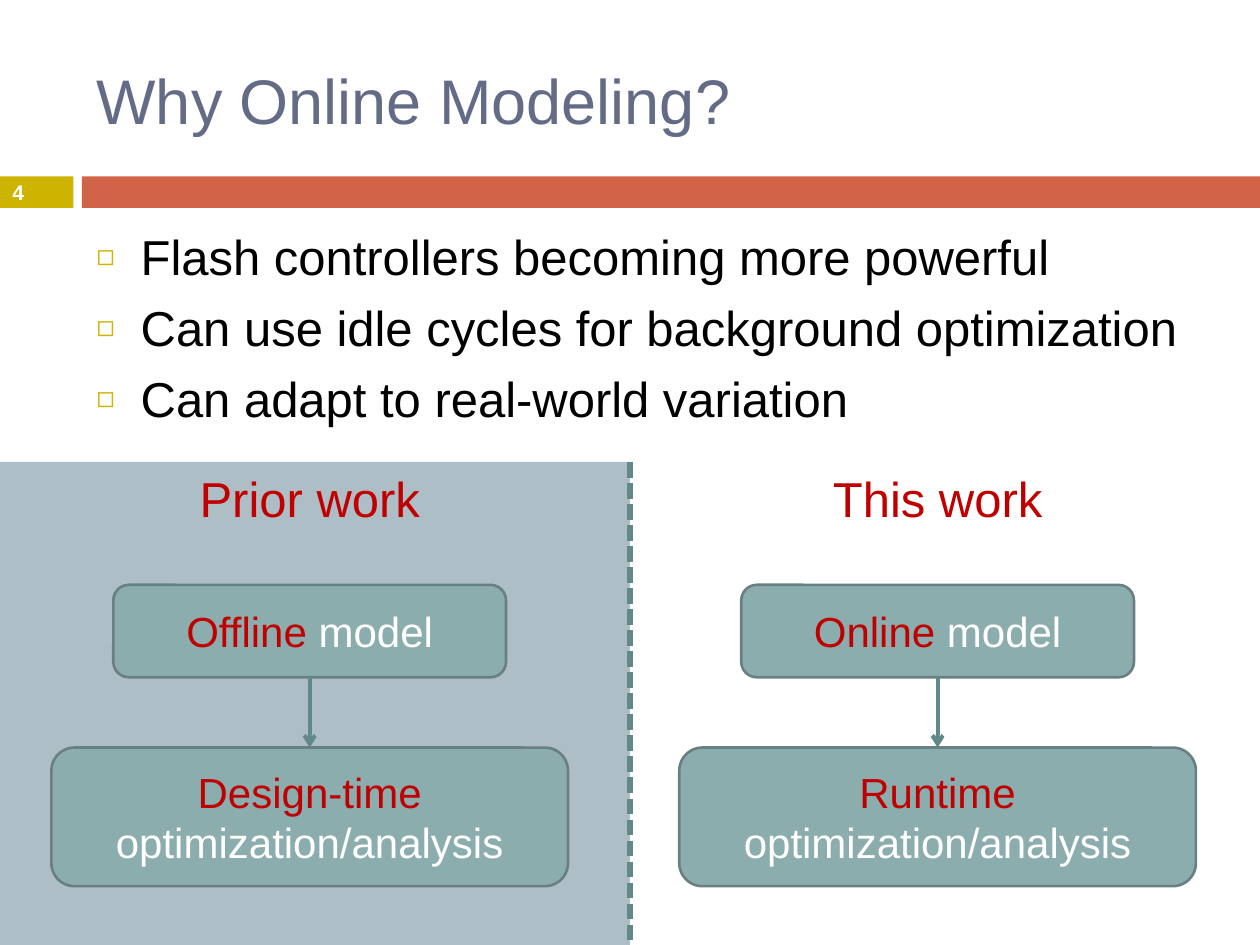
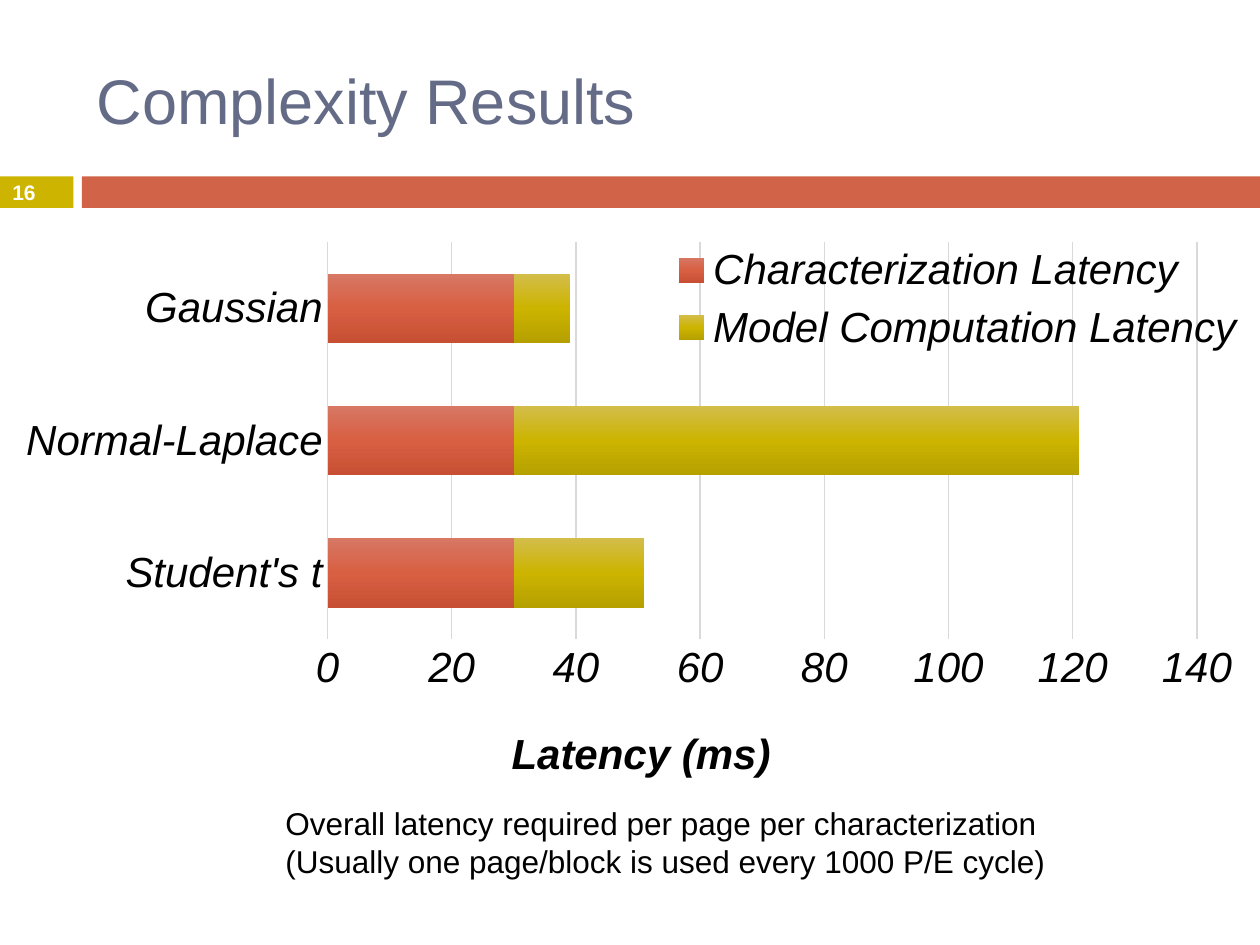
from lxml import etree
from pptx import Presentation
from pptx import util as u
from pptx.chart.data import CategoryChartData
from pptx.dml.color import RGBColor
from pptx.enum import chart as ch, dml, shapes, text
from pptx.oxml.ns import qn

# Shared look: lengths are cells of a grid with 120 columns and 90 rows
WIDTH, HEIGHT = u.Inches(10), u.Inches(7.5)
CELL = WIDTH / 120
FONT = "Arial"
GOLD, RUST, SLATE = "CCB400", "D16349", "646B86"
RED, WHITE, BLACK, GREY = "C00000", "FFFFFF", "000000", "D9D9D9"
PANEL, STEP_FILL, STEP_LINE, TEAL = "ADBEC6", "8CADAE", "688081", "61898A"

TITLE_BOX = (8, 3, 107, 13)
BODY_BOX = (8, 21, 107, 59)
BAND_TOP, BAND_HEIGHT = 16.8, 3


def rgb(hex_colour):
    return RGBColor.from_string(hex_colour)


def cells(*values):
    return [u.Emu(round(v * CELL)) for v in values]


def add_xml(parent, tag, **attributes):
    return etree.SubElement(parent, qn(tag), attributes)


def style(font, size, colour, bold=False, italic=False):
    font.name, font.size, font.color.rgb = FONT, u.Pt(size), rgb(colour)
    font.bold, font.italic = bold, italic


def place(placeholder, box):
    placeholder.left, placeholder.top, placeholder.width, placeholder.height = cells(*box)
    placeholder.text_frame.auto_size = text.MSO_AUTO_SIZE.NONE


def block(slide, box, fill, line=None, kind=shapes.MSO_SHAPE.RECTANGLE):
    part = slide.shapes.add_shape(kind, *cells(*box))
    part.shadow.inherit = False
    part.fill.solid()
    part.fill.fore_color.rgb = rgb(fill)
    if line:
        part.line.color.rgb = rgb(line)
        part.line.width = u.Pt(1.5)
    else:
        part.line.fill.background()
    return part


def label(slide, box, words, size, colour, align=text.PP_ALIGN.LEFT):
    caption = slide.shapes.add_textbox(*cells(*box))
    caption.text_frame.word_wrap = True
    paragraph = caption.text_frame.paragraphs[0]
    paragraph.text = words
    paragraph.alignment = align
    for run in paragraph.runs:
        style(run.font, size, colour)


def connector(slide, start, end, width):
    link = slide.shapes.add_connector(
        shapes.MSO_CONNECTOR.STRAIGHT, *cells(*start, *end))
    link.line.color.rgb = rgb(TEAL)
    link.line.width = u.Pt(width)
    add_xml(link._element.spPr, "a:effectLst")
    return link


def new_slide(deck, layout, heading, number):
    """Add a slide with the title, the two bands and the slide number."""
    slide = deck.slides.add_slide(deck.slide_layouts[layout])
    block(slide, (7.8, BAND_TOP, 112.2, BAND_HEIGHT), RUST)
    number_band = block(slide, (0, BAND_TOP, 7, BAND_HEIGHT), GOLD)
    number_band.text_frame.text = number
    number_band.text_frame.margin_top = number_band.text_frame.margin_bottom = 0
    style(number_band.text_frame.paragraphs[0].font, 12, WHITE, bold=True)

    title = slide.shapes.title
    place(title, TITLE_BOX)
    title.text_frame.text = heading
    title.text_frame.vertical_anchor = text.MSO_ANCHOR.MIDDLE
    paragraph = title.text_frame.paragraphs[0]
    paragraph.alignment = text.PP_ALIGN.LEFT
    style(paragraph.font, 36, SLATE)
    return slide


def bullet_list(body, points):
    place(body, BODY_BOX)
    body.text_frame.text = "\n".join(points)
    for i, paragraph in enumerate(body.text_frame.paragraphs):
        paragraph.space_before = u.Pt(7 if i else 0)
        properties = paragraph._p.get_or_add_pPr()
        indent = u.Inches(0.35)
        properties.set("marL", str(indent))
        properties.set("indent", str(-indent))
        add_xml(add_xml(properties, "a:buClr"), "a:srgbClr", val=GOLD)
        add_xml(properties, "a:buSzPct", val="60000")
        add_xml(properties, "a:buChar", char="◻")
        style(paragraph.font, 28, BLACK)


def step(slide, box, stressed, rest):
    """Rounded box whose first words are red and the others white."""
    part = block(slide, box, STEP_FILL, STEP_LINE,
                 shapes.MSO_SHAPE.ROUNDED_RECTANGLE)
    part.text_frame.word_wrap = True
    paragraph = part.text_frame.paragraphs[0]
    paragraph.alignment = text.PP_ALIGN.CENTER
    for words, colour in ((stressed, RED), (" " + rest, WHITE)):
        run = paragraph.add_run()
        run.text = words
        style(run.font, 24, colour)
    return part


def work_flow(slide, box, heading, model_kind, analysis_time):
    """Heading over a model that leads to its optimization."""
    left, top, width, _ = box
    model_width, model_top, model_height = 37.4, top + 11.7, 8.8
    analysis_top, analysis_height = top + 27.2, 13.2
    label(slide, (left, top, width, 7), heading, 28, RED, text.PP_ALIGN.CENTER)
    model = step(slide, (left + (width - model_width) / 2, model_top,
                         model_width, model_height), model_kind, "model")
    analysis = step(slide, (left, analysis_top, width, analysis_height),
                    analysis_time, "optimization/analysis")
    middle = left + width / 2
    arrow = connector(slide, (middle, model_top + model_height),
                      (middle, analysis_top), 2.25)
    arrow.begin_connect(model, 2)
    arrow.end_connect(analysis, 0)
    add_xml(arrow.line._get_or_add_ln(), "a:tailEnd", type="arrow")


def modeling_slide(deck):
    slide = new_slide(deck, 1, "Why Online Modeling?", "4")
    bullet_list(slide.placeholders[1], [
        "Flash controllers becoming more powerful",
        "Can use idle cycles for background optimization",
        "Can adapt to real-world variation",
    ])
    # Comparison: shaded left half, dashed divider, one flow on each side
    top, height = 44, 47
    block(slide, (-1, top, 61, height), PANEL)
    divider = connector(slide, (60, top), (60, top + height), 3)
    divider.line.dash_style = dml.MSO_LINE.SQUARE_DOT
    flows = [("Prior work", "Offline", "Design-time"),
             ("This work", "Online", "Runtime")]
    for i, flow in enumerate(flows):
        work_flow(slide, (4.9 + 59.8 * i, top, 49.2, height), *flow)


def set_layout(parent, index, **shares):
    """Fix a chart part at shares of the chart's size."""
    layout = parent.find(qn("c:layout"))
    if layout is None:
        layout = etree.Element(qn("c:layout"))
        parent.insert(index, layout)
    manual = add_xml(layout, "c:manualLayout")
    if "w" in shares and index == 0:
        add_xml(manual, "c:layoutTarget", val="inner")
    for side in "xy":
        add_xml(manual, f"c:{side}Mode", val="edge")
    for side, share in shares.items():
        add_xml(manual, f"c:{side}", val=str(share))


def gradient(series, colours):
    fill = add_xml(series._element.get_or_add_spPr(), "a:gradFill", rotWithShape="1")
    stops = add_xml(fill, "a:gsLst")
    for i, colour in enumerate(colours):
        stop = add_xml(stops, "a:gs", pos=str(50000 * i))
        add_xml(stop, "a:srgbClr", val=colour)
    add_xml(fill, "a:lin", ang="5400000", scaled="0")


def latency_chart(slide, box):
    data = CategoryChartData()
    data.categories = ["Student's t", "Normal-Laplace", "Gaussian"]
    data.add_series("Characterization Latency", (30, 30, 30))
    data.add_series("Model Computation Latency", (21, 91, 9))
    chart = slide.shapes.add_chart(
        ch.XL_CHART_TYPE.BAR_STACKED, *cells(*box), data).chart
    chart.has_title = False
    style(chart.font, 24, BLACK, italic=True)

    # Bars
    bars = chart.plots[0]
    bars.gap_width, bars.overlap, bars.vary_by_categories = 90, 100, False
    gradients = [("D77764", "D85F42", "C74F33"), ("D3BD4B", GOLD, "B5A000")]
    for series, colours in zip(bars.series, gradients):
        gradient(series, colours)

    # Axes
    models, latency = chart.category_axis, chart.value_axis
    for axis in (models, latency):
        axis.major_tick_mark = axis.minor_tick_mark = ch.XL_TICK_MARK.NONE
    models.format.line.color.rgb = rgb(GREY)
    models.format.line.width = u.Pt(1)
    latency.format.line.fill.background()
    latency.minimum_scale, latency.maximum_scale, latency.major_unit = 0, 140, 20
    latency.major_gridlines.format.line.color.rgb = rgb(GREY)
    latency.major_gridlines.format.line.width = u.Pt(0.75)
    axis_title = latency.axis_title
    axis_title.text_frame.text = "Latency (ms)"
    style(axis_title.text_frame.paragraphs[0].runs[0].font, 24, BLACK, True, True)

    # Legend over the plot
    chart.has_legend = True
    chart.legend.position = ch.XL_LEGEND_POSITION.CORNER
    chart.legend.include_in_layout = True
    style(chart.legend.font, 24, BLACK, italic=True)

    set_layout(chart._chartSpace.chart.plotArea, 0, x=0.26, y=0.02, w=0.69, h=0.7)
    set_layout(axis_title._element, 1, x=0.4, y=0.86)
    set_layout(chart.legend._element, 1, x=0.53, y=0.01, w=0.46, h=0.22)


def results_slide(deck):
    slide = new_slide(deck, 5, "Complexity Results", "16")
    latency_chart(slide, (0, 22, 120, 54))
    label(slide, (26, 76, 76, 8.5),
          "Overall latency required per page per characterization\v"
          "(Usually one page/block is used every 1000 P/E cycle)", 18, BLACK)


def main():
    deck = Presentation()
    deck.slide_width, deck.slide_height = WIDTH, HEIGHT
    modeling_slide(deck)
    results_slide(deck)
    deck.save("out.pptx")


if __name__ == "__main__":
    main()
